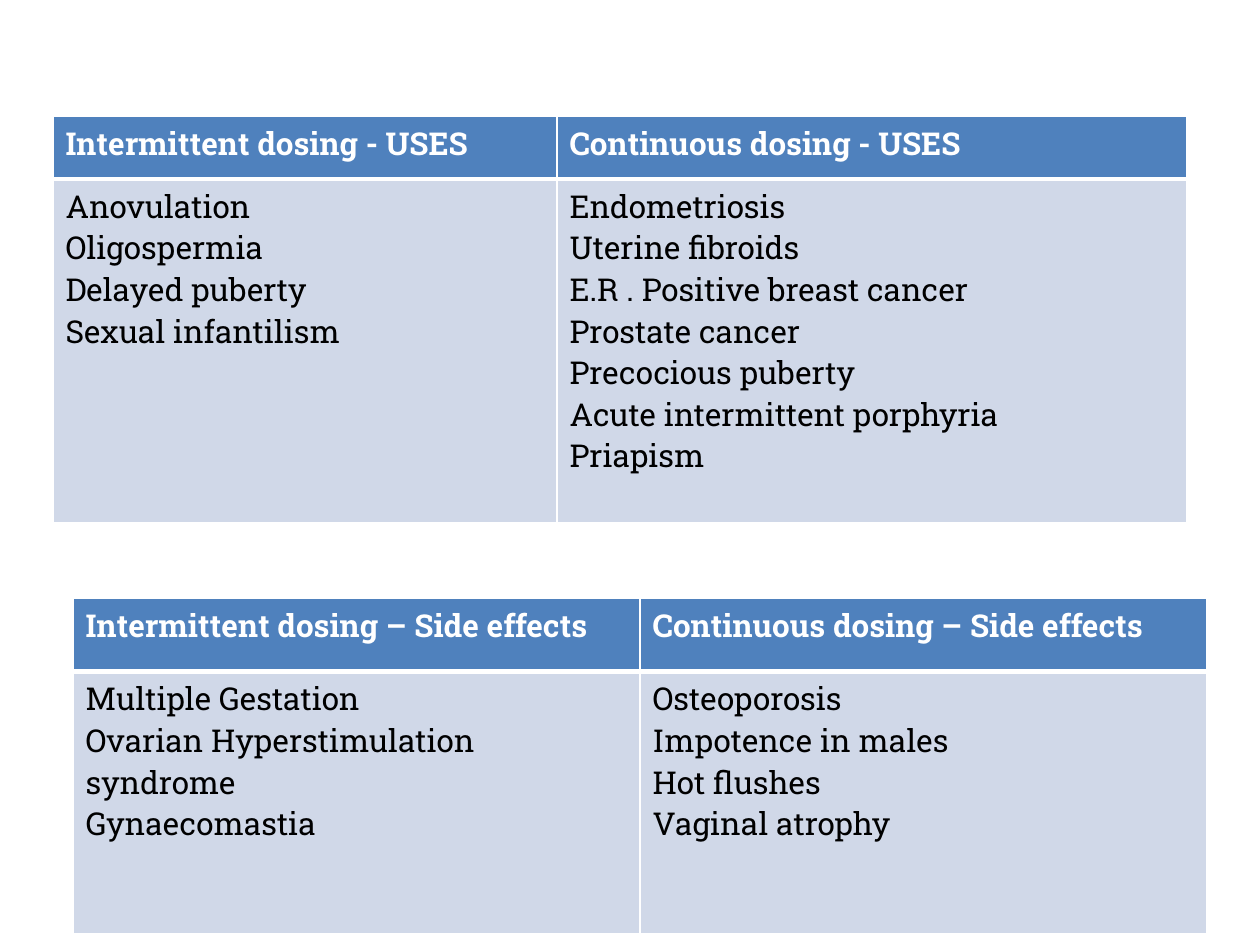
"""Build a slide with two tables on the uses and side effects of dosing schedules."""
from dataclasses import dataclass

from lxml.etree import SubElement
from pptx import Presentation
from pptx.dml.color import RGBColor
from pptx.oxml.ns import qn
from pptx.util import Inches, Pt


@dataclass(frozen=True)
class Theme:
    font: str = "Roboto Slab"
    size: int = 18
    header_fill: str = "4F81BD"
    body_fill: str = "D0D8E8"
    header_text: str = "FFFFFF"
    body_text: str = "000000"
    border: str = "FFFFFF"
    thin: int = 1
    thick: int = 3


class SlideBuilder:
    def __init__(self, slide, theme):
        self.slide = slide
        self.theme = theme

    def table(self, left, top, widths, heights, rows):
        frame = self.slide.shapes.add_table(
            len(rows), len(widths), Inches(left), Inches(top),
            Inches(sum(widths)), Inches(sum(heights)))
        table = frame.table
        for column, width in zip(table.columns, widths):
            column.width = Inches(width)
        for row, height, texts in zip(table.rows, heights, rows):
            row.height = Inches(height)
            for cell, lines in zip(row.cells, texts):
                self.cell(cell, lines, is_header=row is table.rows[0] or texts is rows[0])

    def cell(self, cell, lines, is_header):
        theme = self.theme
        cell.text = "\n".join(lines)
        for paragraph in cell.text_frame.paragraphs:
            font = paragraph.font
            font.name = theme.font
            font.size = Pt(theme.size)
            font.bold = is_header
            font.color.rgb = RGBColor.from_string(
                theme.header_text if is_header else theme.body_text)
        self.borders(cell, theme.thick if is_header else theme.thin, is_header)
        cell.fill.solid()
        cell.fill.fore_color.rgb = RGBColor.from_string(
            theme.header_fill if is_header else theme.body_fill)

    def borders(self, cell, bottom, is_header):
        theme = self.theme
        top = theme.thin if is_header else theme.thick
        properties = cell._tc.get_or_add_tcPr()
        widths = {"a:lnL": theme.thin, "a:lnR": theme.thin, "a:lnT": top, "a:lnB": bottom}
        for tag, width in widths.items():
            line = SubElement(properties, qn(tag), w=str(Pt(width)))
            fill = SubElement(line, qn("a:solidFill"))
            SubElement(fill, qn("a:srgbClr"), val=theme.border)


def main():
    presentation = Presentation()
    presentation.slide_width = Inches(10)
    presentation.slide_height = Inches(7.5)
    slide = presentation.slides.add_slide(presentation.slide_layouts[6])
    builder = SlideBuilder(slide, Theme())

    uses = [
        [["Intermittent dosing - USES"], ["Continuous dosing - USES"]],
        [["Anovulation", "Oligospermia", "Delayed puberty", "Sexual infantilism"],
         ["Endometriosis", "Uterine fibroids", "E.R . Positive breast cancer",
          "Prostate cancer", "Precocious puberty", "Acute intermittent porphyria",
          "Priapism"]],
    ]
    side_effects = [
        [["Intermittent dosing – Side effects"], ["Continuous dosing – Side effects"]],
        [["Multiple Gestation", "Ovarian Hyperstimulation syndrome", "Gynaecomastia"],
         ["Osteoporosis", "Impotence in males", "Hot flushes", "Vaginal atrophy"]],
    ]
    builder.table(0.42, 0.92, [4, 5], [0.5, 2.73], uses)
    builder.table(0.58, 4.75, [4.5, 4.5], [0.58, 2.08], side_effects)
    presentation.save("out.pptx")


if __name__ == "__main__":
    main()
